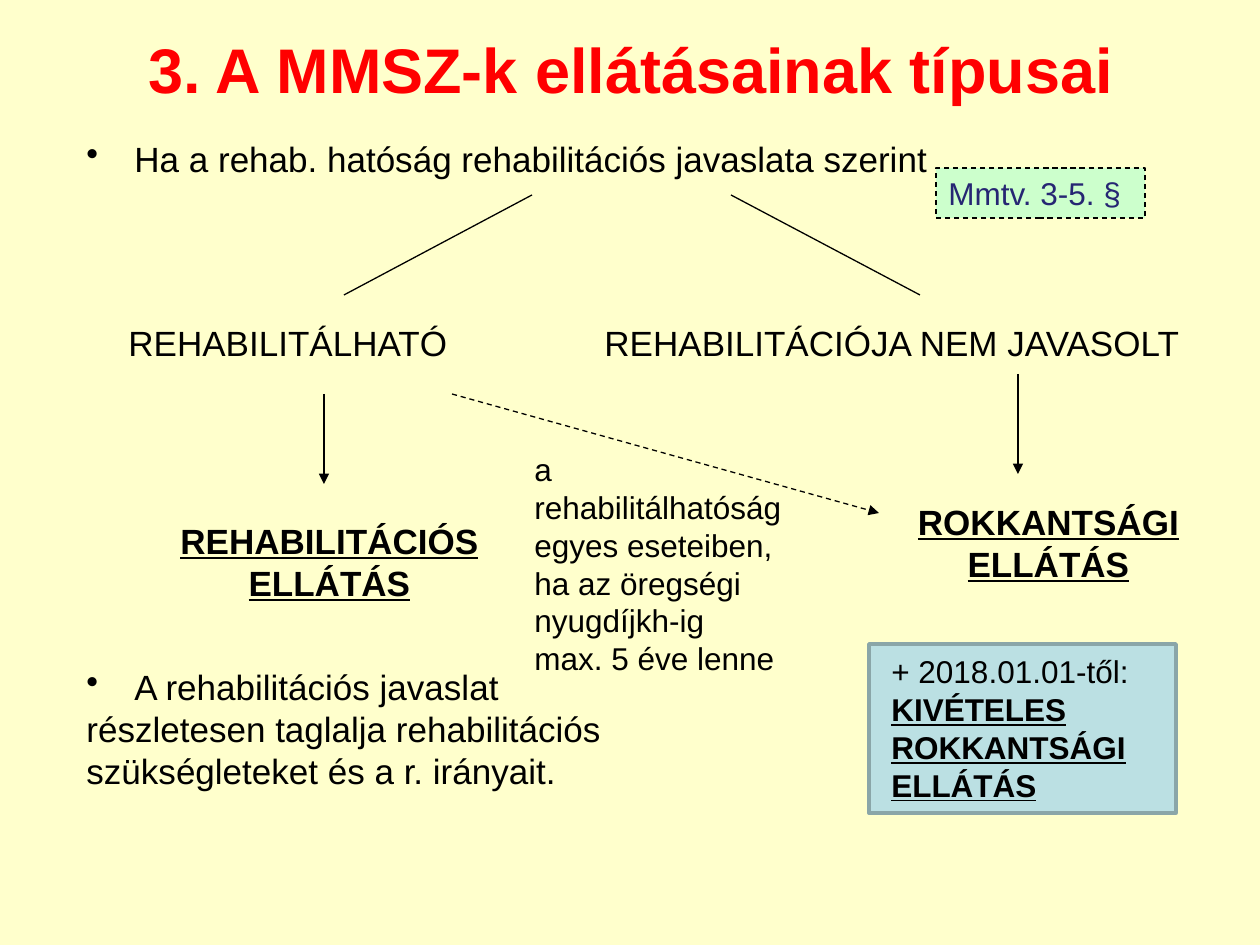
import pptx
import pptx.util
import pptx.dml.color
import pptx.enum.dml
import pptx.enum.shapes
import pptx.enum.text
import pptx.oxml.ns
from lxml import etree

PX = 914400 // 126
FONT = "Arial"
BLACK = "000000"
HANGING = 48
DASH = pptx.enum.dml.MSO_LINE.DASH

# Boxes are (left, top, width, height) in px
TITLE = ("3. A MMSZ-k ellátásainak típusai", (64, -28, 1134, 193))
BULLETS = [
    (["Ha a rehab. hatóság rehabilitációs javaslata szerint"], (74, 139, 1143, 48)),
    (["A rehabilitációs javaslat",
      "részletesen taglalja rehabilitációs",
      "szükségleteket és a r. irányait."], (74, 667, 1143, 130)),
]
BRANCHES = [
    ("REHABILITÁLHATÓ", (116, 315, 475, 54)),
    ("REHABILITÁCIÓJA NEM JAVASOLT", (592, 315, 610, 54)),
]
BENEFITS = [
    ("REHABILITÁCIÓS ELLÁTÁS", (126, 513, 407, 97)),
    ("ROKKANTSÁGI ELLÁTÁS", (845, 494, 407, 97)),
]
CONDITION = (["a", "rehabilitálhatóság", "egyes eseteiben,", "ha az öregségi",
              "nyugdíjkh-ig", "max. 5 éve lenne"], (522, 444, 272, 239))
LAW = ("Mmtv. 3-5. §", (936, 168, 209, 50))
EXCEPTION_PANEL = (869, 644, 307, 169)
EXCEPTION_BOX = (879, 646, 338, 165)
EXCEPTION_HEAD = "+ 2018.01.01-től:"
EXCEPTION_NAMES = ["KIVÉTELES ROKKANTSÁGI", "ELLÁTÁS"]
# Start, end, arrowhead, dashed
LINES = [
    ((532, 195), (344, 295), False, False),
    ((731, 195), (920, 295), False, False),
    ((324, 394), (324, 484), True, False),
    ((1018, 374), (1018, 474), True, False),
    ((452, 394), (879, 513), True, True),
]


def color(value):
    return pptx.dml.color.RGBColor.from_string(value)


def px(values):
    return [value * PX for value in values]


def add_xml(parent, tag, **attributes):
    return etree.SubElement(parent, pptx.oxml.ns.qn(tag), attributes)


def style_line(line, value, width, dashed=False):
    line.color.rgb = color(value)
    line.width = pptx.util.Pt(width)
    if dashed:
        line.dash_style = DASH


def add_panel(slide, box, fill, line, width, dashed=False):
    shape = slide.shapes.add_shape(pptx.enum.shapes.MSO_SHAPE.RECTANGLE, *px(box))
    shape.shadow.inherit = False
    shape.fill.solid()
    shape.fill.fore_color.rgb = color(fill)
    style_line(shape.line, line, width, dashed)


def add_text(slide, lines, box, size=20, value=BLACK, strong=(), underline=True,
             centered=False, middle=False, wrap=True, hanging=False):
    """Add one paragraph per line; strong holds the indexes of the bold lines."""
    shape = slide.shapes.add_textbox(*px(box))
    frame = shape.text_frame
    frame.word_wrap = wrap
    if middle:
        frame.vertical_anchor = pptx.enum.text.MSO_ANCHOR.MIDDLE
    for index, line in enumerate(lines):
        paragraph = frame.paragraphs[0] if index == 0 else frame.add_paragraph()
        paragraph.alignment = (pptx.enum.text.PP_ALIGN.CENTER if centered
                               else pptx.enum.text.PP_ALIGN.LEFT)
        if hanging:
            paragraph.line_spacing = 0.8
            paragraph.space_before = pptx.util.Pt(5 if index else 0)
            properties = paragraph._p.get_or_add_pPr()
            properties.set("marL", str(HANGING * PX))
            properties.set("indent", str(-HANGING * PX))
            if index == 0:
                add_xml(properties, "a:buChar", char="•")
        run = paragraph.add_run()
        run.text = line
        run.font.name = FONT
        run.font.size = pptx.util.Pt(size)
        run.font.color.rgb = color(value)
        if index in strong:
            run.font.bold = True
            run.font.underline = underline


def add_line(slide, start, end, arrow, dashed):
    connector = slide.shapes.add_connector(
        pptx.enum.shapes.MSO_CONNECTOR.STRAIGHT, *px(start + end))
    style_line(connector.line, BLACK, 0.75, dashed)
    if arrow:
        add_xml(connector.line._get_or_add_ln(), "a:tailEnd", type="triangle")
    add_xml(connector._element.spPr, "a:effectLst")


def main():
    presentation = pptx.Presentation()
    presentation.slide_width, presentation.slide_height = px((1260, 945))
    slide = presentation.slides.add_slide(presentation.slide_layouts[6])
    slide.background.fill.solid()
    slide.background.fill.fore_color.rgb = color("FFFFCC")

    add_panel(slide, EXCEPTION_PANEL, "BBE0E3", "8AA6A8", 2)
    title, box = TITLE
    add_text(slide, [title], box, size=36, value="FF0000", strong=(0,),
             underline=False, centered=True, middle=True)
    for lines, box in BULLETS:
        add_text(slide, lines, box, hanging=True)
    for line in LINES:
        add_line(slide, *line)
    for label, box in BRANCHES:
        add_text(slide, [label], box)
    for label, box in BENEFITS:
        add_text(slide, [label], box, strong=(0,), centered=True)
    lines, box = CONDITION
    add_text(slide, lines, box, size=18, wrap=False)
    label, box = LAW
    add_panel(slide, box, "CCFFCC", BLACK, 0.75, dashed=True)
    add_text(slide, [label], box, size=18, value="262673", wrap=False)
    add_text(slide, [EXCEPTION_HEAD] + EXCEPTION_NAMES, EXCEPTION_BOX,
             size=18, strong=(1, 2))

    presentation.save("out.pptx")


if __name__ == "__main__":
    main()
